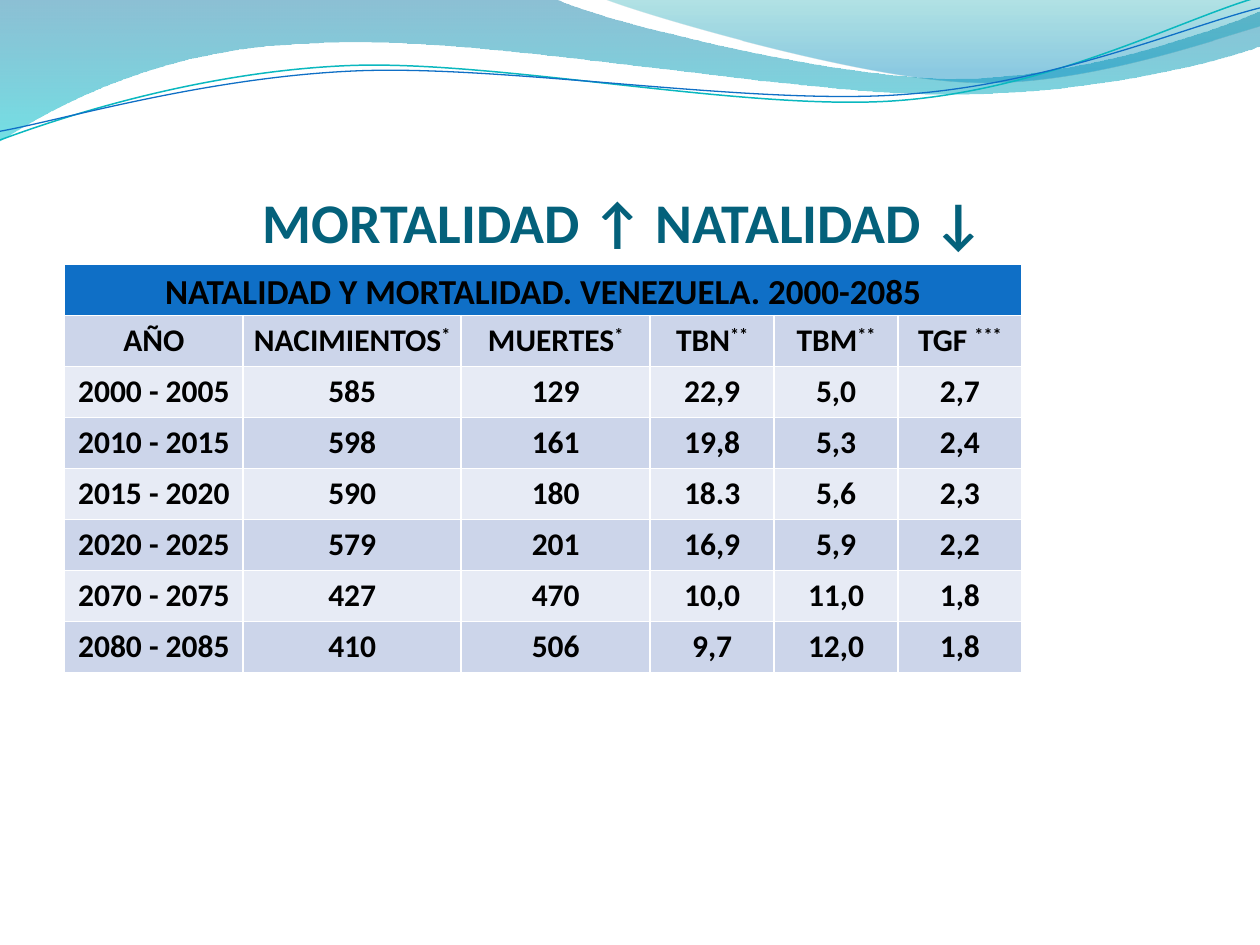
from lxml.etree import Element, SubElement
from pptx import Presentation
from pptx.dml.color import RGBColor
from pptx.enum.text import MSO_ANCHOR, PP_ALIGN
from pptx.oxml.ns import qn
from pptx.util import Pt


def tint(hue):
    return RGBColor.from_string(hue)


def write(frame, words, size=18, hue="000000", space=None):
    para = frame.paragraphs[0]
    para.alignment = PP_ALIGN.CENTER
    para.line_spacing = space
    base, star, rest = words.partition("*")
    for part in filter(None, (base, star + rest)):
        run = para.add_run()
        run.text = part
        run.font.name = "Calibri"
        run.font.size = Pt(size)
        run.font.bold = True
        run.font.color.rgb = tint(hue)
        if part.startswith("*"):
            run.font._element.set("baseline", "30000")


deck = Presentation()
deck.slide_width, deck.slide_height = Pt(720), Pt(540)
slide = deck.slides.add_slide(deck.slide_layouts[5])
shapes = slide.shapes

waves = [
    {"start": (0, 0), "stops": [(0, "0074A1", 45), (1, "00C6CF", 55)],
     "legs": [(317, -0.7), (343, 12, 478, 45, 546, 45), (614, 45, 690, 19, 720, 6.5),
              (720.7, 26), (708, 32, 626, 55, 537, 54), (448, 54, 275, 20, 185, 24.5),
              (93, 26, 33, 60, -0.7, 81), (0, 0)]},
    {"start": (345, -0.7), "stops": [(0, "00A1A9", 30), (0.8, "008BBF", 45)],
     "legs": [(366, 8, 491, 45, 554, 47), (616, 50, 692, 23, 720, 15), (720, 0),
              (345, -0.7)]},
    {"start": (0, 80), "line": ("0AB8BF", 0.85),
     "legs": [(35, 67, 114, 41, 199, 37.5), (284, 34, 427, 64, 513, 57.5),
              (600, 51, 675, 11, 718.5, -1.5)]},
    {"start": (0, 75), "line": ("0F6FC6", 0.75),
     "legs": [(34, 69, 118, 44, 204, 40.5), (290, 37, 430, 60.5, 516, 54),
              (602, 48, 678, 15, 720, 4.5)]},
]
for wave in waves:
    dots = [(Pt(leg[i]), Pt(leg[i + 1])) for leg in wave["legs"] for i in range(0, len(leg), 2)]
    pen = shapes.build_freeform(Pt(wave["start"][0]), Pt(wave["start"][1]))
    pen.add_line_segments(dots, close="stops" in wave)
    shape = pen.convert_to_shape()
    shape.shadow.inherit = False
    lines = iter(list(shape._element.iter(qn("a:lnTo"))))
    for leg in wave["legs"]:
        first = next(lines)
        if len(leg) == 6:
            curve = Element(qn("a:cubicBezTo"))
            first.addprevious(curve)
            for node in (first, next(lines), next(lines)):
                curve.append(node[0])
                node.getparent().remove(node)
    if "stops" in wave:
        shape.line.fill.background()
        shape.fill.gradient()
        shape.fill.gradient_angle = 270
        for stop, (spot, hue, alpha) in zip(shape.fill.gradient_stops, wave["stops"]):
            stop.position = spot
            stop.color.rgb = tint(hue)
            node = stop._gs.find(qn("a:srgbClr"))
            SubElement(node, qn("a:alpha")).set("val", str(alpha * 1000))
    else:
        hue, width = wave["line"]
        shape.fill.background()
        shape.line.color.rgb = tint(hue)
        shape.line.width = Pt(width)

title = shapes.title
title.left, title.top, title.width, title.height = Pt(36), Pt(55.5), Pt(648), Pt(90)
frame = title.text_frame
frame.word_wrap = True
frame.vertical_anchor = MSO_ANCHOR.BOTTOM
frame.margin_left = frame.margin_right = frame.margin_bottom = 0
frame.margin_top = Pt(3.6)
write(frame, "MORTALIDAD ↑ NATALIDAD ↓ ", size=32, hue="04617B")

rows = [
    ["NATALIDAD Y MORTALIDAD. VENEZUELA. 2000-2085"],
    ["AÑO", "NACIMIENTOS*", "MUERTES*", "TBN**", "TBM**", "TGF ***"],
    ["2000 - 2005", "585", "129", "22,9", "5,0", "2,7"],
    ["2010 - 2015", "598", "161", "19,8", "5,3", "2,4"],
    ["2015 - 2020", "590", "180", "18.3", "5,6", "2,3"],
    ["2020 - 2025", "579", "201", "16,9", "5,9", "2,2"],
    ["2070 - 2075", "427", "470", "10,0", "11,0", "1,8"],
    ["2080 - 2085", "410", "506", "9,7", "12,0", "1,8"],
]
widths = [102, 124.6, 108, 70.8, 70.8, 70.8]
high = 29.16
table = shapes.add_table(len(rows), len(widths), Pt(37), Pt(151.2),
                         Pt(sum(widths)), Pt(high * len(rows))).table
for col, width in zip(table.columns, widths):
    col.width = Pt(width)
table.cell(0, 0).merge(table.cell(0, len(widths) - 1))
for r, row in enumerate(rows):
    table.rows[r].height = Pt(high)
    for c, words in enumerate(row):
        cell = table.cell(r, c)
        cell.margin_left = cell.margin_right = Pt(5)
        cell.margin_top = cell.margin_bottom = 0
        cell.fill.solid()
        cell.fill.fore_color.rgb = tint("0F6FC6" if r == 0 else ("E7EBF5", "CCD5EA")[r % 2])
        write(cell.text_frame, words, size=18 if r else 20, space=1.15)

deck.save("out.pptx")
